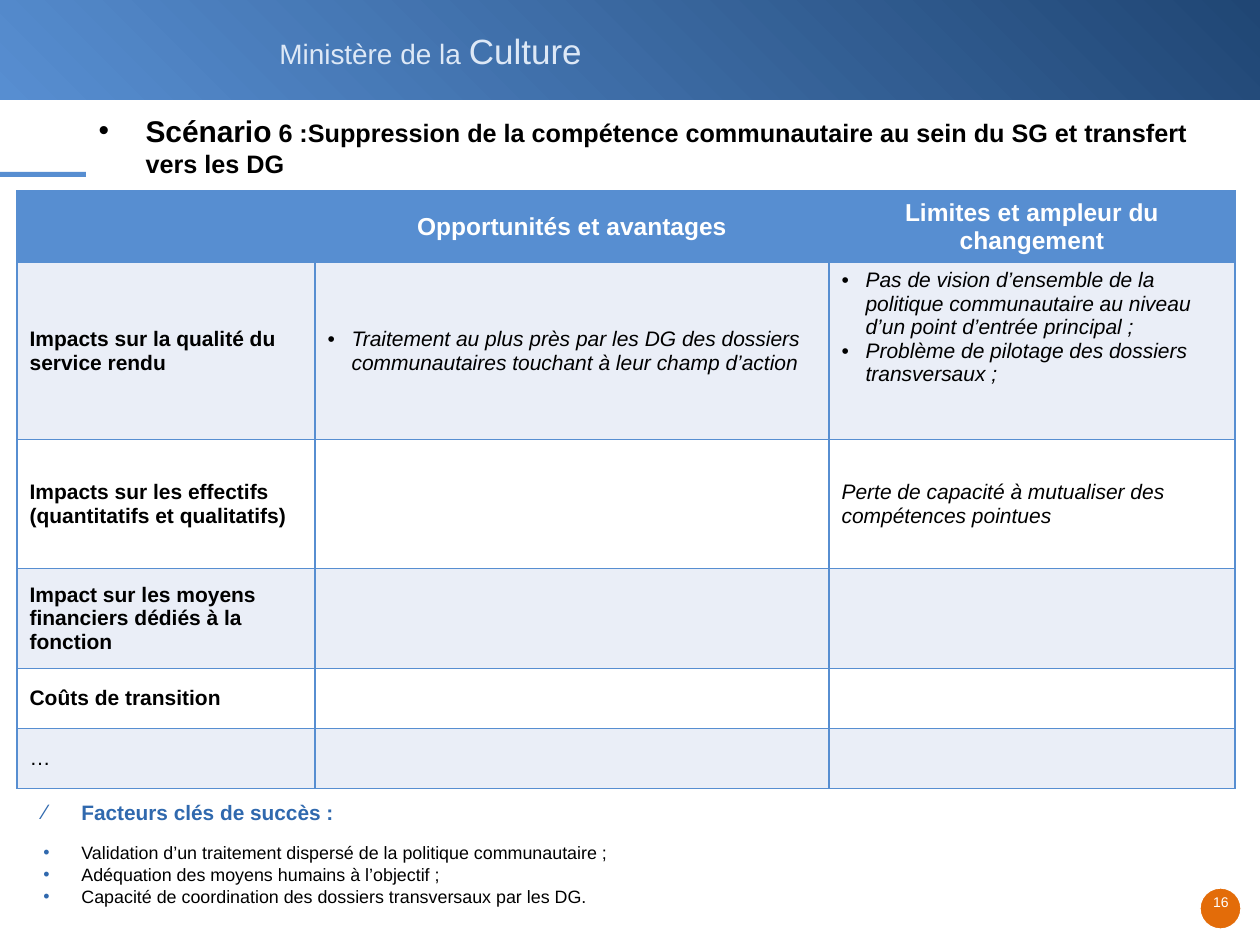
"""Build the scenario 6 impact slide."""
from lxml.etree import SubElement
from pptx import Presentation
from pptx.dml.color import RGBColor
from pptx.enum.shapes import MSO_SHAPE as Shape
from pptx.enum.text import MSO_ANCHOR as Anchor, MSO_AUTO_SIZE as Auto, PP_ALIGN as Align
from pptx.oxml.ns import qn
from pptx.util import Emu, Pt

BLUE, INK, WHITE, PALE, DEEP = "578ED1", "000000", "FFFFFF", "EAEEF7", "3069AE"
BANNER = [("Ministère de la ", {"size": 16}), ("Culture", {"size": 20})]
TITLE = [
    ("Scénario", {"size": 17.1}),
    (" 6 :Suppression de la compétence communautaire au sein du SG et transfert vers les DG",
     {"size": 14.4}),
]
HEADS = ["", "Opportunités et avantages", "Limites et ampleur du changement"]
ROWS = [
    ("Impacts sur la qualité du service rendu",
     ["Traitement au plus près par les DG des dossiers communautaires touchant à leur champ d’action"],
     ["Pas de vision d’ensemble de la politique communautaire au niveau d’un point d’entrée principal ;",
      "Problème de pilotage des dossiers transversaux ;"]),
    ("Impacts sur les effectifs (quantitatifs et qualitatifs)", "",
     "Perte de capacité à mutualiser des compétences pointues"),
    ("Impact sur les moyens financiers dédiés à la fonction", "", ""),
    ("Coûts de transition", "", ""),
    ("…", "", ""),
]
WIDTHS = [298, 514, 406]
HEIGHTS = [69, 177, 129, 100, 60, 60]
KEYS = "Facteurs clés de succès :"
FACTORS = [
    "Validation d’un traitement dispersé de la politique communautaire ;",
    "Adéquation des moyens humains à l’objectif ;",
    "Capacité de coordination des dossiers transversaux par les DG.",
]


def px(n):
    return Emu(round(n * 914400 / 126))


def rgb(code):
    return RGBColor.from_string(code)


def bullet(para, mark, dent, color):
    props = para._p.get_or_add_pPr()
    props.set("marL", str(px(dent)))
    props.set("indent", str(-px(dent)))
    SubElement(SubElement(props, qn("a:buClr")), qn("a:srgbClr"), val=color)
    SubElement(props, qn("a:buFont"), typeface="Arial")
    SubElement(props, qn("a:buChar"), char=mark)


def write(para, runs, color, align=Align.LEFT, **look):
    para.alignment = align
    for words, extra in runs:
        run = para.add_run()
        run.text = words
        font = run.font
        font.color.rgb = rgb(color)
        form = {"name": "Arial", "bold": False, "italic": False, **look, **extra}
        form["size"] = Pt(form["size"])
        for key, value in form.items():
            setattr(font, key, value)


def add_para(frame, first):
    return frame.paragraphs[0] if first else frame.add_paragraph()


def add_box(slide, place, wrap=True, inset=None):
    frame = slide.shapes.add_textbox(*map(px, place)).text_frame
    frame.word_wrap = wrap
    if inset is not None:
        for side in ("left", "top", "right", "bottom"):
            setattr(frame, "margin_" + side, px(inset))
    return frame


def add_form(slide, kind, place, fill=None, line=None):
    shape = slide.shapes.add_shape(kind, *map(px, place))
    shape.shadow.inherit = False
    if fill:
        shape.fill.solid()
        shape.fill.fore_color.rgb = rgb(fill)
    if line:
        shape.line.color.rgb = rgb(line)
        shape.line.width = Pt(0.75)
    else:
        shape.line.fill.background()
    return shape


def add_frame(slide):
    band = add_form(slide, Shape.RECTANGLE, (0, 0, 1260, 100))
    band.fill.gradient()
    band.fill.gradient_angle = 225
    for stop, color in zip(band.fill.gradient_stops, ("204674", BLUE)):
        stop.color.rgb = rgb(color)
    frame = add_box(slide, (267, 23, 331, 55), wrap=False)
    write(frame.paragraphs[0], BANNER, "DDE8F6")
    add_form(slide, Shape.RECTANGLE, (0, 172, 86, 5), BLUE)
    add_form(slide, Shape.OVAL, (1200, 888, 41, 41), "E36C09", WHITE)
    page = add_box(slide, (1202, 888, 38, 29), wrap=False, inset=6)
    page.vertical_anchor = Anchor.TOP
    page.paragraphs[0].space_before = Pt(0)
    write(page.paragraphs[0], [("16", {})], WHITE, Align.CENTER, size=8)


def add_title(slide):
    title = slide.shapes.title
    place = zip(("left", "top", "width", "height"), (86, 106, 1119, 102))
    for key, value in place:
        setattr(title, key, px(value))
    frame = title.text_frame
    frame.word_wrap = True
    frame.auto_size = Auto.NONE
    frame.vertical_anchor = Anchor.TOP
    para = frame.paragraphs[0]
    bullet(para, "•", 47, INK)
    write(para, TITLE, INK, bold=True)


def fill_cell(cell, text, fill, color, align=Align.LEFT, **look):
    cell.fill.solid()
    cell.fill.fore_color.rgb = rgb(fill)
    many = isinstance(text, list)
    cell.vertical_anchor = Anchor.TOP if many and len(text) > 1 else Anchor.MIDDLE
    for i, words in enumerate(text if many else [text]):
        if words:
            para = add_para(cell.text_frame, i == 0)
            if many:
                bullet(para, "•", 24, color)
            write(para, [(words, {})], color, align, **look)
    props = cell._tc.get_or_add_tcPr()
    for i, side in enumerate(("lnL", "lnR", "lnT", "lnB")):
        line = props.makeelement(qn("a:" + side), {"w": str(Pt(1))})
        SubElement(SubElement(line, qn("a:solidFill")), qn("a:srgbClr"), val=BLUE)
        props.insert(i, line)


def add_grid(slide):
    place = map(px, (17, 191, sum(WIDTHS), sum(HEIGHTS)))
    grid = slide.shapes.add_table(len(HEIGHTS), len(WIDTHS), *place).table
    for col, width in zip(grid.columns, WIDTHS):
        col.width = px(width)
    for row, height in zip(grid.rows, HEIGHTS):
        row.height = px(height)
    for c, head in enumerate(HEADS):
        fill_cell(grid.cell(0, c), head, BLUE, WHITE, Align.CENTER, size=14, bold=True)
    for r, row in enumerate(ROWS, 1):
        for c, text in enumerate(row):
            fill_cell(grid.cell(r, c), text, PALE if r % 2 else WHITE, INK, size=12,
                      bold=c == 0 and text != "…", italic=c > 0)


def add_keys(slide):
    frame = add_box(slide, (31, 785, 1105, 134))
    for i, words in enumerate([KEYS, *FACTORS]):
        head = i == 0
        para = add_para(frame, head)
        bullet(para, "⁄" if head else "•", 38, DEEP)
        para.line_spacing = Pt(19) if head else 0.8
        para.space_after = Pt(12 if head else 3)
        write(para, [(words, {})], DEEP if head else INK,
              size=11.9 if head else 10.2, bold=head)


def main():
    deck = Presentation()
    deck.slide_width, deck.slide_height = px(1260), px(945)
    slide = deck.slides.add_slide(deck.slide_layouts[5])
    for part in (add_frame, add_title, add_grid, add_keys):
        part(slide)
    deck.save("out.pptx")


if __name__ == "__main__":
    main()
